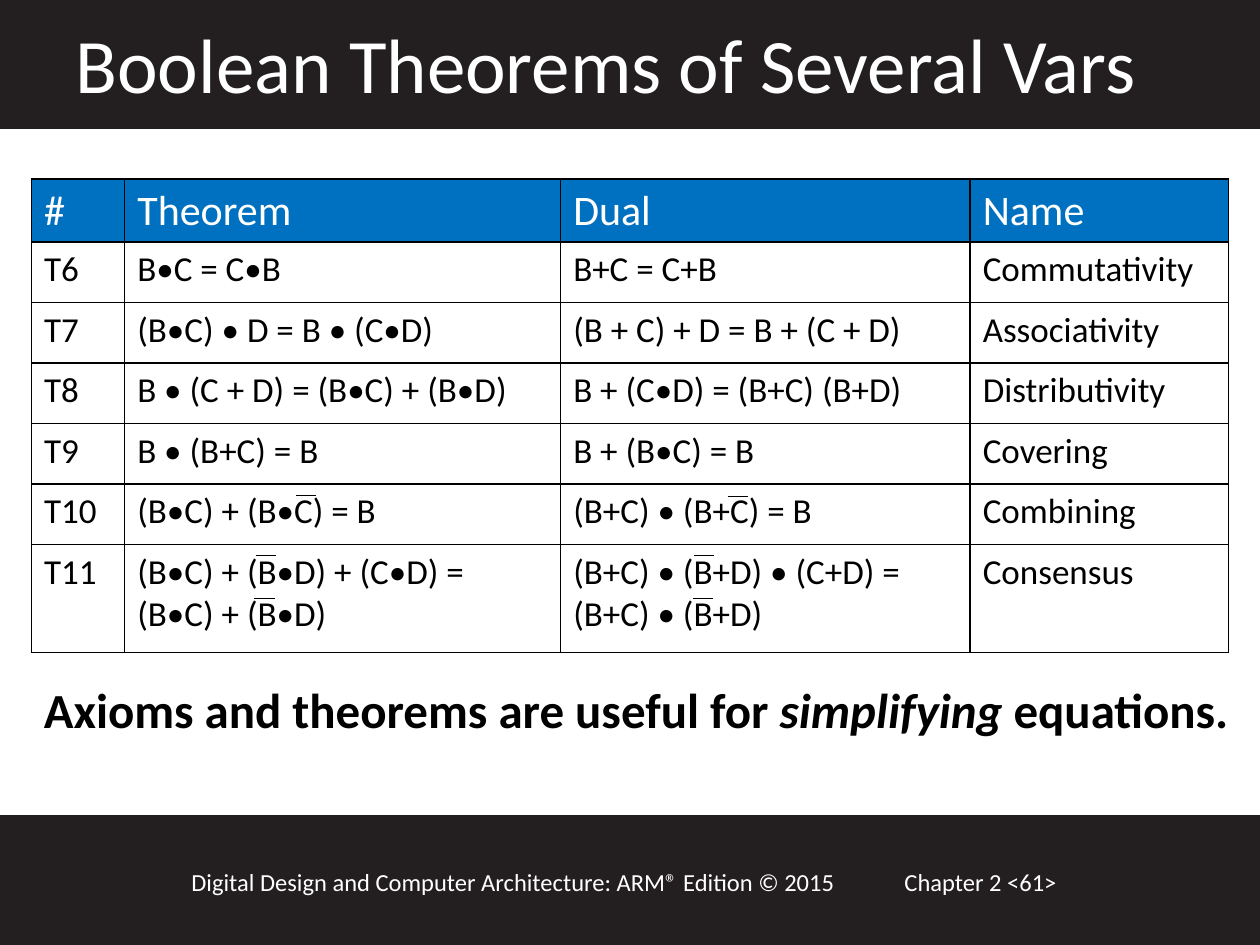
from lxml import etree
from pptx import Presentation, util as u
from pptx.dml.color import RGBColor
from pptx.enum import shapes, text
from pptx.oxml import ns

BLACK = RGBColor(0x00, 0x00, 0x00)
WHITE = RGBColor(0xFF, 0xFF, 0xFF)
CHARCOAL = RGBColor(0x23, 0x1F, 0x20)
BLUE = RGBColor(0x00, 0x70, 0xC0)

COLUMN_WIDTHS = [0.74, 3.46, 3.25, 2.05]
ROW_HEIGHTS = [0.49] + [0.48] * 5 + [0.86]
THEOREMS = [
    ["#", "Theorem", "Dual", "Name"],
    ["T6", "B•C = C•B", "B+C = C+B", "Commutativity"],
    ["T7", "(B•C) • D = B • (C•D)", "(B + C) + D = B + (C + D)", "Associativity"],
    ["T8", "B • (C + D) = (B•C) + (B•D)", "B + (C•D) = (B+C) (B+D)", "Distributivity"],
    ["T9", "B • (B+C) = B", "B + (B•C) = B", "Covering"],
    ["T10", "(B•C) + (B•C) = B", "(B+C) • (B+C) = B", "Combining"],
    ["T11", "(B•C) + (B•D) + (C•D) =\n(B•C) + (B•D)",
     "(B+C) • (B+D) • (C+D) =\n(B+C) • (B+D)", "Consensus"],
]
# Left end and height of each bar over a complemented variable
OVERBARS = [(2.35, 3.93), (2.03, 4.41), (2.02, 4.75),
            (5.78, 3.94), (5.51, 4.41), (5.5, 4.75)]
OVERBAR_WIDTH = 0.16


def write(frame, content, size=20, color=BLACK, bold=False, italic_word=None):
    """Fill a text frame, one paragraph a line, with one optional italic word."""
    for index, line in enumerate(content.split("\n")):
        para = frame.paragraphs[0] if index == 0 else frame.add_paragraph()
        before, word, after = line.partition(italic_word) if italic_word else (line, "", "")
        for part in filter(None, (before, word, after)):
            span = para.add_run()
            span.text = part
            span.font.name = "Calibri"
            span.font.size = u.Pt(size)
            span.font.color.rgb = color
            span.font.bold = bold
            span.font.italic = part == italic_word


class SlideBuilder:
    def __init__(self, deck):
        self.page = deck.slides.add_slide(deck.slide_layouts[5])

    def band(self, top, height):
        bar = self.page.shapes.add_shape(
            shapes.MSO_SHAPE.RECTANGLE, 0, u.Inches(top), u.Inches(10), u.Inches(height))
        bar.shadow.inherit = False
        bar.fill.solid()
        bar.fill.fore_color.rgb = CHARCOAL
        bar.line.color.rgb = CHARCOAL
        bar.line.width = u.Pt(2)

    def title(self, content, left, top, width, height):
        box = self.page.shapes.title
        box.left, box.top = u.Inches(left), u.Inches(top)
        box.width, box.height = u.Inches(width), u.Inches(height)
        frame = box.text_frame
        frame.auto_size = text.MSO_AUTO_SIZE.NONE
        frame.vertical_anchor = text.MSO_ANCHOR.MIDDLE
        write(frame, content, size=44, color=WHITE)
        frame.paragraphs[0].alignment = text.PP_ALIGN.LEFT
        # Bring the title in front of the header band
        self.page.shapes._spTree.append(box._element)

    def label(self, content, left, top, width, height, **style):
        box = self.page.shapes.add_textbox(
            u.Inches(left), u.Inches(top), u.Inches(width), u.Inches(height))
        box.text_frame.word_wrap = True
        write(box.text_frame, content, **style)

    def table(self, rows, left, top):
        table = self.page.shapes.add_table(
            len(rows), len(COLUMN_WIDTHS), u.Inches(left), u.Inches(top),
            u.Inches(sum(COLUMN_WIDTHS)), u.Inches(sum(ROW_HEIGHTS))).table
        table.first_row = table.horz_banding = False
        for column, width in zip(table.columns, COLUMN_WIDTHS):
            column.width = u.Inches(width)
        for row, height in zip(table.rows, ROW_HEIGHTS):
            row.height = u.Inches(height)
        for row_index, row in enumerate(rows):
            header = row_index == 0
            for column_index, content in enumerate(row):
                cell = table.cell(row_index, column_index)
                self.cell_borders(cell)
                cell.fill.solid()
                cell.fill.fore_color.rgb = BLUE if header else WHITE
                write(cell.text_frame, content, size=24 if header else 20,
                      color=WHITE if header else BLACK)

    def cell_borders(self, cell):
        properties = cell._tc.get_or_add_tcPr()
        for side in ("a:lnL", "a:lnR", "a:lnT", "a:lnB"):
            border = etree.SubElement(properties, ns.qn(side), w=str(u.Pt(1)))
            fill = etree.SubElement(border, ns.qn("a:solidFill"))
            etree.SubElement(fill, ns.qn("a:srgbClr"), val=str(BLACK))

    def overbar(self, left, top):
        line = self.page.shapes.add_connector(
            shapes.MSO_CONNECTOR.STRAIGHT, u.Inches(left), u.Inches(top),
            u.Inches(left + OVERBAR_WIDTH), u.Inches(top))
        line.line.color.rgb = BLACK
        line.line.width = u.Pt(0.75)
        etree.SubElement(line._element.spPr, ns.qn("a:effectLst"))


def main():
    deck = Presentation()
    deck.slide_width, deck.slide_height = u.Inches(10), u.Inches(7.5)
    slide = SlideBuilder(deck)

    # Footer and header bands
    slide.band(6.48, 1.02)
    slide.band(0, 1.01)
    slide.label("Chapter 2 <61>", 7.08, 6.83, 2.17, 0.34, size=14, color=WHITE)
    slide.label("Digital Design and Computer Architecture: ARM® Edition © 2015",
                1.42, 6.83, 5.75, 0.34, size=14, color=WHITE)

    # Theorem table with complement bars
    slide.table(THEOREMS, 0.25, 1.42)
    for left, top in OVERBARS:
        slide.overbar(left, top)

    # Title and takeaway
    slide.title("Boolean Theorems of Several Vars", 0.5, 0.08, 8.67, 0.84)
    slide.label("Axioms and theorems are useful for simplifying equations.",
                0.25, 5.34, 10.08, 0.57, size=28, bold=True, italic_word="simplifying")

    deck.save("out.pptx")


if __name__ == "__main__":
    main()
